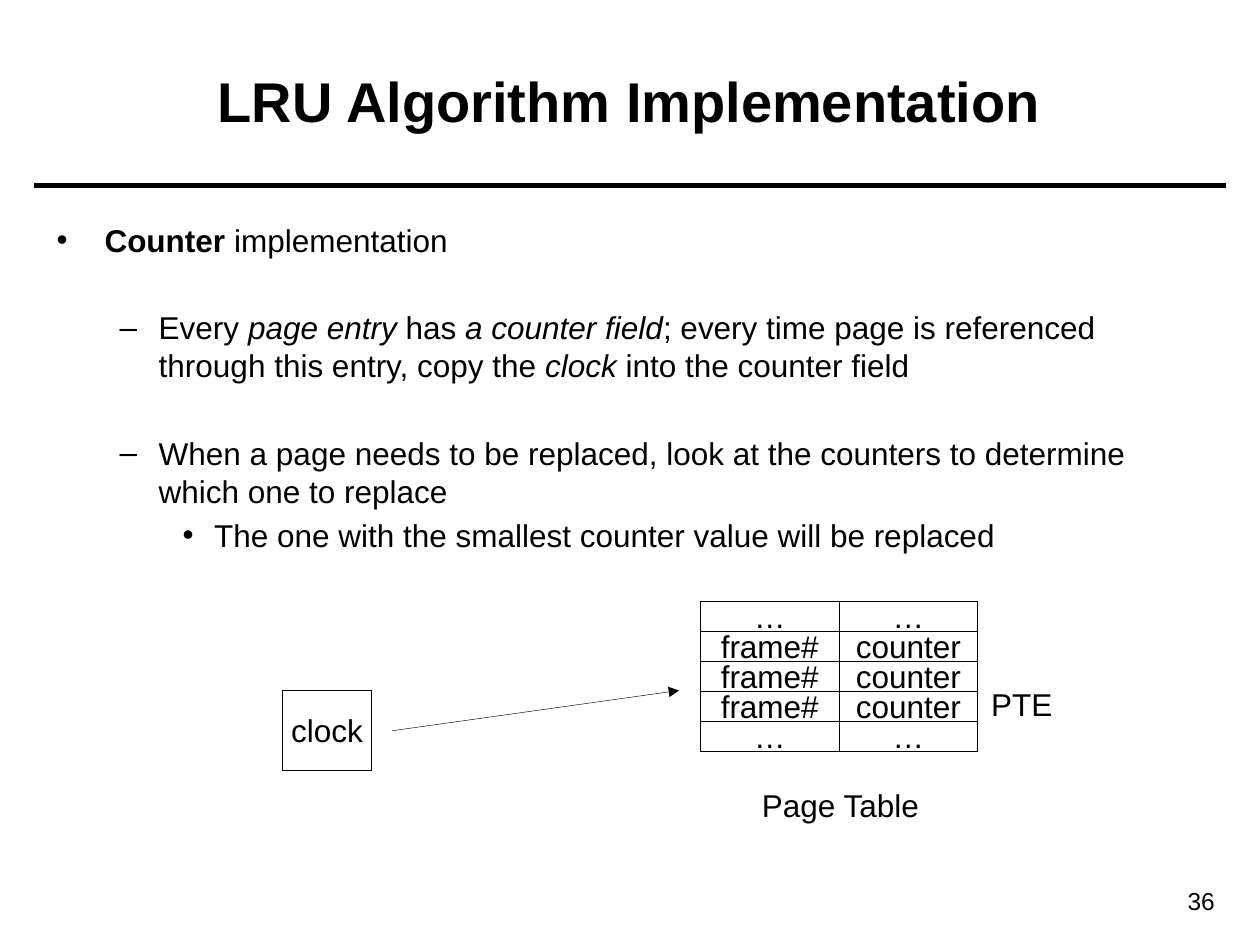
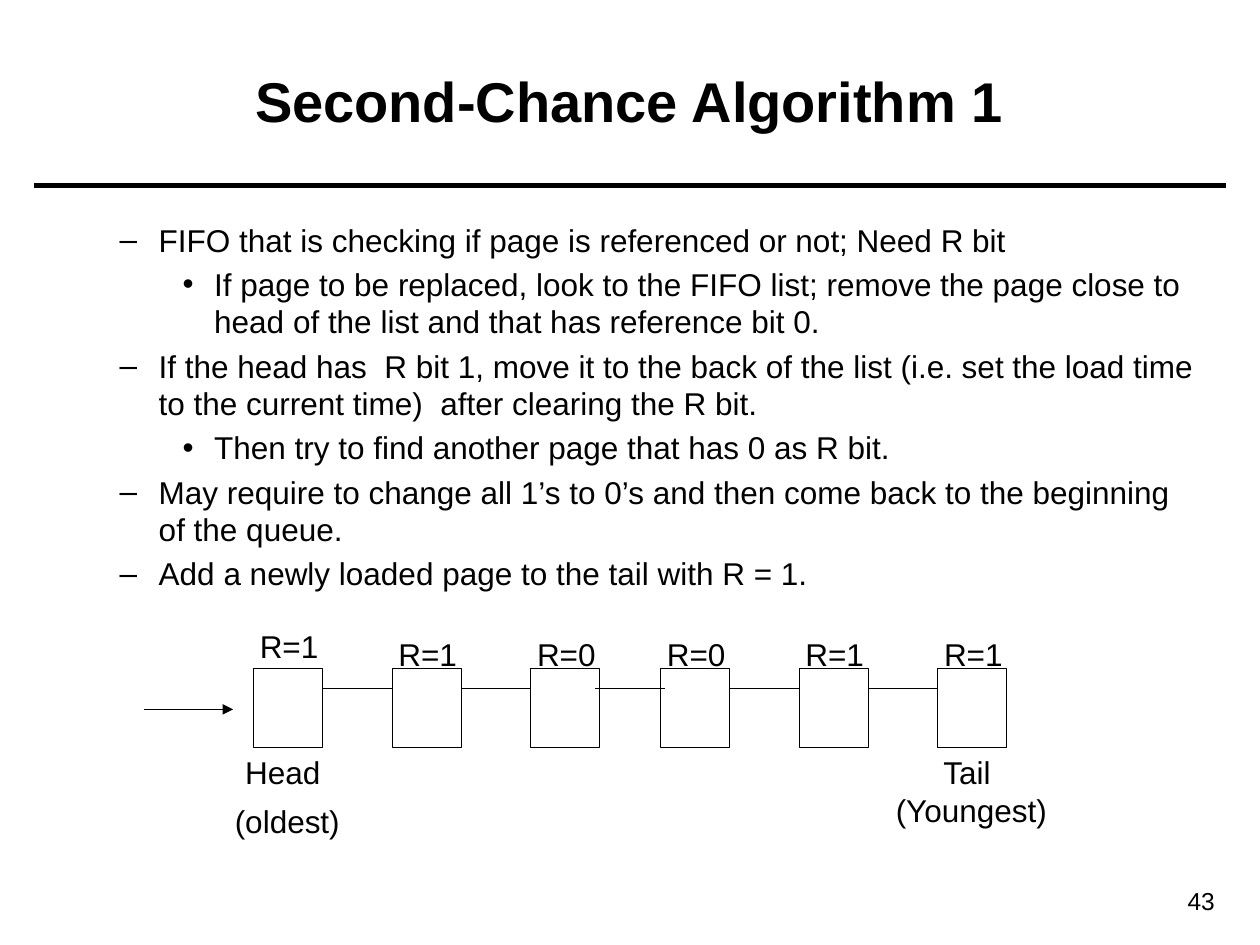
from lxml.etree import SubElement
from pptx import Presentation
from pptx.dml.color import RGBColor
from pptx.enum.shapes import MSO_CONNECTOR, MSO_SHAPE
from pptx.enum.text import MSO_ANCHOR, MSO_AUTO_SIZE, PP_ALIGN
from pptx.oxml.ns import qn
from pptx.util import Inches, Pt

BLACK = RGBColor(0, 0, 0)
FONT = "Arial"
TEXT_SIZE = 18
HAIRLINE = 0.25

SLIDE_SIZE = (10, 7.5)
TITLE_BOX = (0.35, 0.17, 9.29, 1.25)
BODY_BOX = (0.35, 1.7, 9.29, 5.12)
NUMBER_BOX = (8.7, 6.98, 1.04, 0.34)
RULE_MARGIN, RULE_TOP = 0.27, 1.47

LEVELS = [("•", 0.38, 0.38), ("–", 0.81, 0.31), ("•", 1.25, 0.25)]
CLOSE_GAP, WIDE_GAP = 3.6, 28.6

LRU_TITLE = "LRU Algorithm Implementation"
LRU_POINTS = [
    (0, CLOSE_GAP, [("Counter", "bold"), (" implementation", "")]),
    (1, WIDE_GAP, [
        ("Every ", ""), ("page entry ", "italic"), ("has ", ""),
        ("a counter field", "italic"),
        ("; every time page is referenced through this entry, copy the ", ""),
        ("clock", "italic"), (" into the counter field", ""),
    ]),
    (1, WIDE_GAP, [("When a page needs to be replaced, look at the counters "
                    "to determine which one to replace", "")]),
    (2, CLOSE_GAP, [("The one with the smallest counter value will be replaced", "")]),
]
PAGE_TABLE = [("…", "…")] + [("frame#", "counter")] * 3 + [("…", "…")]
PAGE_TABLE_BOX = (5.56, 4.77, 2.2, 1.19)
CLOCK_BOX = (2.24, 5.48, 0.71, 0.63)
CLOCK_ARROW = (3.11, 5.8, 5.39, 5.48)
LRU_LABELS = [("PTE", 8.11, 5.39, 0.74), ("Page Table", 6.67, 6.19, 1.5)]

CHANCE_TITLE = "Second-Chance Algorithm 1"
CHANCE_POINTS = [
    (level, CLOSE_GAP, [(text, "")]) for level, text in [
        (1, "FIFO that is checking if page is referenced or not; Need R bit"),
        (2, "If page to be replaced, look to the FIFO list; remove the page "
            "close to head of the list and that has reference bit 0."),
        (1, "If the head has  R bit 1, move it to the back of the list (i.e. "
            "set the load time to the current time)  after clearing the R bit."),
        (2, "Then try to find another page that has 0 as R bit."),
        (1, "May require to change all 1’s to 0’s and then come back to the "
            "beginning of the queue."),
        (1, "Add a newly loaded page to the tail with R = 1."),
    ]
]
QUEUE_HALVES = [
    (2.01, [("R=1", 4.93), ("R=1", 4.99), ("R=0", 4.99)]),
    (5.24, [("R=0", 4.99), ("R=1", 4.99), ("R=1", 4.99)]),
]
QUEUE_PITCH, QUEUE_TOP = 1.1, 5.3
PAGE_WIDTH, PAGE_HEIGHT = 0.55, 0.63
BIT_LABEL_WIDTH = 0.74
LINK_TOP, LINK_LENGTH = 5.46, 0.55
HEAD_ARROW = (1.14, 5.63, 1.85, 5.63)
QUEUE_LABELS = [
    ("Head ", 2.28, 5.93, 0.96),
    ("(oldest)", 2.28, 6.32, 1.12),
    ("Tail \n(Youngest)", 7.71, 5.93, 1.5),
]


def place(shape, box):
    shape.left, shape.top, shape.width, shape.height = map(Inches, box)


def format_text(text_frame, alignment, size=TEXT_SIZE, bold=None):
    for paragraph in text_frame.paragraphs:
        paragraph.alignment = alignment
        for run in paragraph.runs:
            run.font.name = FONT
            run.font.size = Pt(size)
            run.font.color.rgb = BLACK
            if bold is not None:
                run.font.bold = bold


def add_line(slide, ends, width=HAIRLINE, arrow=False):
    connector = slide.shapes.add_connector(
        MSO_CONNECTOR.STRAIGHT, *map(Inches, ends))
    connector.line.color.rgb = BLACK
    connector.line.width = Pt(width)
    if arrow:
        SubElement(connector.line._get_or_add_ln(), qn("a:tailEnd"), type="triangle")
    SubElement(connector._element.spPr, qn("a:effectLst"))


def add_box(slide, box, text=""):
    shape = slide.shapes.add_shape(MSO_SHAPE.RECTANGLE, *map(Inches, box))
    shape.shadow.inherit = False
    shape.fill.background()
    shape.line.color.rgb = BLACK
    shape.line.width = Pt(HAIRLINE)
    if text:
        text_frame = shape.text_frame
        text_frame.text = text
        text_frame.word_wrap = False
        text_frame.vertical_anchor = MSO_ANCHOR.MIDDLE
        format_text(text_frame, PP_ALIGN.CENTER)


def add_label(slide, text, center, top, width):
    height = 0.1 + 0.3 * len(text.split("\n"))
    label = slide.shapes.add_textbox(
        *map(Inches, (center - width / 2, top, width, height)))
    text_frame = label.text_frame
    text_frame.text = text
    text_frame.word_wrap = False
    text_frame.auto_size = MSO_AUTO_SIZE.NONE
    format_text(text_frame, PP_ALIGN.CENTER)


def fill_body(body, points):
    text_frame = body.text_frame
    text_frame.auto_size = MSO_AUTO_SIZE.NONE
    for index, (level, gap, pieces) in enumerate(points):
        paragraph = text_frame.add_paragraph() if index else text_frame.paragraphs[0]
        paragraph.level = level
        paragraph.space_before = Pt(gap)
        for text, style in pieces:
            run = paragraph.add_run()
            run.text = text
            run.font.bold = style == "bold"
            run.font.italic = style == "italic"
        mark, margin, hanging = LEVELS[level]
        properties = paragraph._p.get_or_add_pPr()
        properties.set("marL", str(Inches(margin)))
        properties.set("indent", str(-Inches(hanging)))
        SubElement(properties, qn("a:buFont"), typeface=FONT)
        SubElement(properties, qn("a:buChar"), char=mark)
    format_text(text_frame, PP_ALIGN.LEFT)


def add_content_slide(presentation, title, points, number):
    slide = presentation.slides.add_slide(presentation.slide_layouts[1])
    heading, body = slide.placeholders
    place(heading, TITLE_BOX)
    heading.text_frame.text = title
    heading.text_frame.vertical_anchor = MSO_ANCHOR.MIDDLE
    heading.text_frame.auto_size = MSO_AUTO_SIZE.NONE
    format_text(heading.text_frame, PP_ALIGN.CENTER, size=32, bold=True)
    place(body, BODY_BOX)
    fill_body(body, points)
    add_line(slide, (RULE_MARGIN, RULE_TOP, SLIDE_SIZE[0] - RULE_MARGIN, RULE_TOP), width=3)
    number_box = slide.shapes.add_textbox(*map(Inches, NUMBER_BOX))
    number_box.text_frame.word_wrap = True
    number_box.text_frame.text = str(number)
    format_text(number_box.text_frame, PP_ALIGN.RIGHT, size=14)
    return slide


def draw_page_table(slide):
    left, top, width, height = PAGE_TABLE_BOX
    row_height = height / len(PAGE_TABLE)
    for row, entry in enumerate(PAGE_TABLE):
        column_width = width / len(entry)
        for column, text in enumerate(entry):
            add_box(slide, (left + column * column_width, top + row * row_height,
                            column_width, row_height), text)
    add_box(slide, CLOCK_BOX, "clock")
    add_line(slide, CLOCK_ARROW, arrow=True)
    for label in LRU_LABELS:
        add_label(slide, *label)


def draw_queue(slide):
    centers = []
    for start, pages in QUEUE_HALVES:
        for index, (bit, label_top) in enumerate(pages):
            left = start + index * QUEUE_PITCH
            center = left + PAGE_WIDTH / 2
            centers.append(center)
            add_box(slide, (left, QUEUE_TOP, PAGE_WIDTH, PAGE_HEIGHT))
            add_label(slide, bit, center + 0.01, label_top, BIT_LABEL_WIDTH)
    for center, following in zip(centers, centers[1:]):
        middle = (center + following) / 2
        add_line(slide, (middle - LINK_LENGTH / 2, LINK_TOP,
                         middle + LINK_LENGTH / 2, LINK_TOP))
    add_line(slide, HEAD_ARROW, arrow=True)
    for label in QUEUE_LABELS:
        add_label(slide, *label)


def main():
    presentation = Presentation()
    presentation.slide_width, presentation.slide_height = map(Inches, SLIDE_SIZE)
    draw_page_table(add_content_slide(presentation, LRU_TITLE, LRU_POINTS, 36))
    draw_queue(add_content_slide(presentation, CHANCE_TITLE, CHANCE_POINTS, 43))
    presentation.save("out.pptx")


if __name__ == "__main__":
    main()
